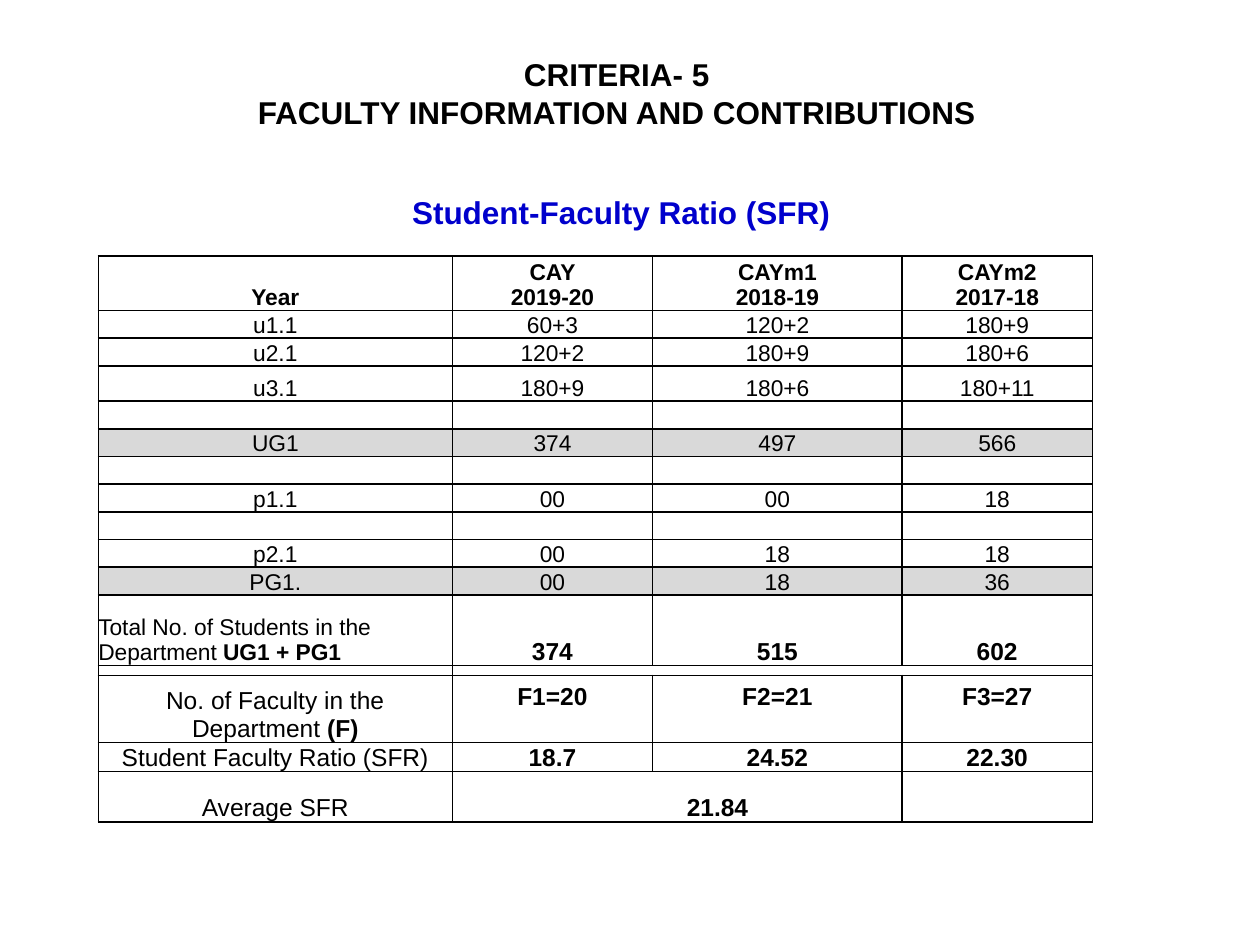
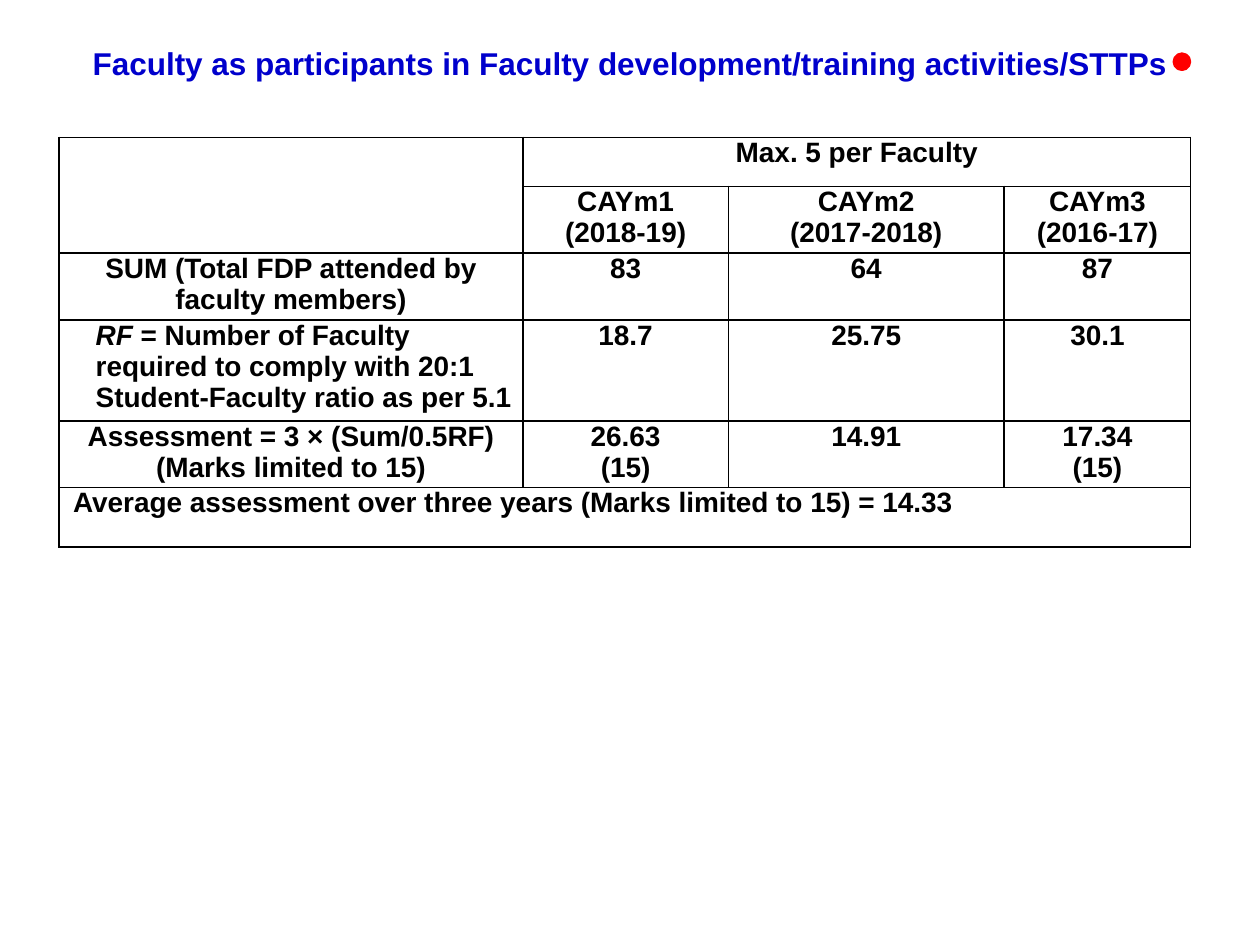
from lxml.etree import SubElement
from pptx import Presentation
from pptx.dml.color import RGBColor
from pptx.enum.shapes import MSO_SHAPE
from pptx.enum.text import MSO_ANCHOR, MSO_AUTO_SIZE, PP_ALIGN
from pptx.oxml.ns import qn
from pptx.util import Inches, Pt

BLACK = RGBColor(0, 0, 0)
BLUE = RGBColor(0x00, 0x00, 0xCC)
GREY = RGBColor(0xD9, 0xD9, 0xD9)
RED = RGBColor(0xFF, 0x00, 0x00)
FONT = "Arial"
HEAD = 18
TITLE_ONLY = 5
COLS, ROWS = 100, 75
UNIT = Inches(0.1)

RATIO_COLS = [28.1, 15.9, 19.8, 15.1]
RATIO_ROWS = [
    (4.3, 13, True, ["Year", "CAY\n2019-20", "CAYm1\n2018-19", "CAYm2\n2017-18"]),
    (2.2, 13, False, ["u1.1", "60+3", "120+2", "180+9"]),
    (2.2, 13, False, ["u2.1", "120+2", "180+9", "180+6"]),
    (2.8, 13, False, ["u3.1", "180+9", "180+6", "180+11"]),
    (2.2, 13, False, [""] * 4),
    (2.2, 13, False, ["UG1", "374", "497", "566"]),
    (2.2, 13, False, [""] * 4),
    (2.2, 13, False, ["p1.1", "00", "00", "18"]),
    (2.2, 13, False, [""] * 4),
    (2.2, 13, False, ["p2.1", "00", "18", "18"]),
    (2.2, 13, False, ["PG1.", "00", "18", "36"]),
    (5.6, 14, True, ["Total No. of Students in the Department |UG1 + PG1|",
                     "374", "515", "602"]),
    (0.8, 4, False, [""] * 4),
    (5.3, 14, True, ["No. of Faculty in the\nDepartment |(F)|",
                     "F1=20", "F2=21", "F3=27"]),
    (2.3, 14, True, ["Student Faculty Ratio (SFR)", "18.7", "24.52", "22.30"]),
    (4.0, 14, True, ["Average SFR", "21.84", "", ""]),
]
TOTAL, GAP, STAFF, MEAN = 11, 12, 13, 15

TRAIN_COLS = [36.8, 16.3, 21.9, 14.8]
TRAIN_ROWS = [
    (3.9, ["", "Max. 5 per Faculty", "", ""]),
    (5.3, ["", "CAYm1\n(2018-19)", "CAYm2\n(2017-2018)", "CAYm3\n(2016-17)"]),
    (5.3, ["SUM (Total FDP attended by faculty members)", "83", "64", "87"]),
    (8.0, ["|RF |= Number of Faculty required to comply with 20:1 "
           "Student-Faculty ratio as per 5.1", "18.7", "25.75", "30.1"]),
    (5.3, ["Assessment = 3 × (Sum/0.5RF)\n(Marks limited to 15)",
           "26.63\n(15)", "14.91", "17.34\n(15)"]),
    (4.7, ["Average assessment over three years (Marks limited to 15) = 14.33",
           "", "", ""]),
]


def grid(*spans):
    """Turn counts of grid units into lengths."""
    return [int(UNIT * span) for span in spans]


def style(para, size, color, bold, align=PP_ALIGN.CENTER):
    """Set the font and alignment of a paragraph."""
    para.alignment = align
    font = para.font
    font.name, font.size, font.bold = FONT, Pt(size), bold
    font.color.rgb = color


def write(frame, text, size, color, bold, mark="bold", align=PP_ALIGN.CENTER):
    """Fill a text frame, stressing what stands between bars."""
    for index, line in enumerate(text.split("\n")):
        para = frame.add_paragraph() if index else frame.paragraphs[0]
        for place, part in enumerate(line.split("|")):
            if part:
                run = para.add_run()
                run.text = part
                if place % 2:
                    setattr(run.font, mark, True)
        style(para, size, color, bold, align)
        if not line:
            SubElement(para._p, qn("a:endParaRPr"), sz=str(size * 100))


def add_title(slide, text, color, *place):
    """Move and fill the title placeholder."""
    title = slide.shapes.title
    title.left, title.top, title.width, title.height = grid(*place)
    frame = title.text_frame
    frame.auto_size = MSO_AUTO_SIZE.NONE
    frame.vertical_anchor = MSO_ANCHOR.TOP
    write(frame, text, HEAD, color, True)


def add_label(slide, text, *place):
    """Add a blue heading above a table."""
    frame = slide.shapes.add_textbox(*grid(*place)).text_frame
    frame.word_wrap = False
    write(frame, text, HEAD, BLUE, True)


def rule(cell):
    """Draw thin black borders round a cell."""
    props = cell._tc.get_or_add_tcPr()
    for side in ("a:lnL", "a:lnR", "a:lnT", "a:lnB"):
        line = SubElement(props, qn(side), w=str(Pt(1)))
        fill = SubElement(line, qn("a:solidFill"))
        SubElement(fill, qn("a:srgbClr"), val=str(BLACK))


def add_grid(slide, left, top, widths, heights, anchor, side):
    """Add a plain ruled table."""
    shape = slide.shapes.add_table(
        len(heights), len(widths),
        *grid(left, top, sum(widths), sum(heights)))
    table = shape.table
    table.first_row = table.horz_banding = False
    for col, width in zip(table.columns, grid(*widths)):
        col.width = width
    for row, height in zip(table.rows, grid(*heights)):
        row.height = height
    for cell in table.iter_cells():
        rule(cell)
        cell.fill.background()
        cell.vertical_anchor = anchor
        cell.margin_left = cell.margin_right = Inches(side)
        cell.margin_top = cell.margin_bottom = 0
    return table


def add_dot(slide, *place):
    """Add a red dot."""
    dot = slide.shapes.add_shape(MSO_SHAPE.OVAL, *grid(*place))
    dot.shadow.inherit = False
    dot.fill.solid()
    dot.fill.fore_color.rgb = RED
    dot.line.color.rgb = RED
    dot.line.width = Pt(2)


def ratio(deck):
    """Build the slide on the student-faculty ratio."""
    slide = deck.slides.add_slide(deck.slide_layouts[TITLE_ONLY])
    add_title(slide, "CRITERIA- 5\nFACULTY INFORMATION AND CONTRIBUTIONS",
              BLACK, 6.2, 3.9, 85.5, 7.1)
    add_label(slide, "Student-Faculty Ratio (SFR)", 31.2, 14.8, 36.2, 4)
    table = add_grid(slide, 7.8, 20.3, RATIO_COLS,
                     [row[0] for row in RATIO_ROWS], MSO_ANCHOR.BOTTOM, 0)
    for r, (_, size, bold, texts) in enumerate(RATIO_ROWS):
        for c, text in enumerate(texts):
            cell = table.cell(r, c)
            first = r == TOTAL and c == 0
            write(cell.text_frame, text, 13 if first else size, BLACK,
                  bold and (c > 0 or r == 0),
                  align=PP_ALIGN.LEFT if first else PP_ALIGN.CENTER)
            if texts[0] in ("UG1", "PG1."):
                cell.fill.solid()
                cell.fill.fore_color.rgb = GREY
            if r == STAFF and c:
                cell.vertical_anchor = MSO_ANCHOR.TOP
                cell.margin_top = Inches(0.06)
    table.cell(GAP, 1).merge(table.cell(GAP, 3))
    table.cell(MEAN, 1).merge(table.cell(MEAN, 2))
    table.cell(MEAN, 1).margin_left = Inches(0.64)


def training(deck):
    """Build the slide on faculty training."""
    slide = deck.slides.add_slide(deck.slide_layouts[TITLE_ONLY])
    add_title(slide, "Faculty as participants in Faculty "
              "development/training activities/STTPs", BLUE, 3.9, 3, 92.2, 4)
    table = add_grid(slide, 4.7, 10.9, TRAIN_COLS,
                     [row[0] for row in TRAIN_ROWS], MSO_ANCHOR.TOP, 0.04)
    inset = {3: 0.29, 5: 0.11}
    for r, (_, texts) in enumerate(TRAIN_ROWS):
        for c, text in enumerate(texts):
            cell = table.cell(r, c)
            left = c == 0 and r in inset
            write(cell.text_frame, text, 16, BLACK, True, "italic",
                  PP_ALIGN.LEFT if left else PP_ALIGN.CENTER)
            if left:
                cell.margin_left = Inches(inset[r])
    table.cell(0, 0).merge(table.cell(1, 0))
    table.cell(0, 1).merge(table.cell(0, 3))
    table.cell(5, 0).merge(table.cell(5, 3))
    add_dot(slide, 93.2, 4.3, 1.2, 1.2)


def main():
    """Build and save the deck."""
    deck = Presentation()
    deck.slide_width, deck.slide_height = grid(COLS, ROWS)
    ratio(deck)
    training(deck)
    deck.save("out.pptx")


if __name__ == "__main__":
    main()
